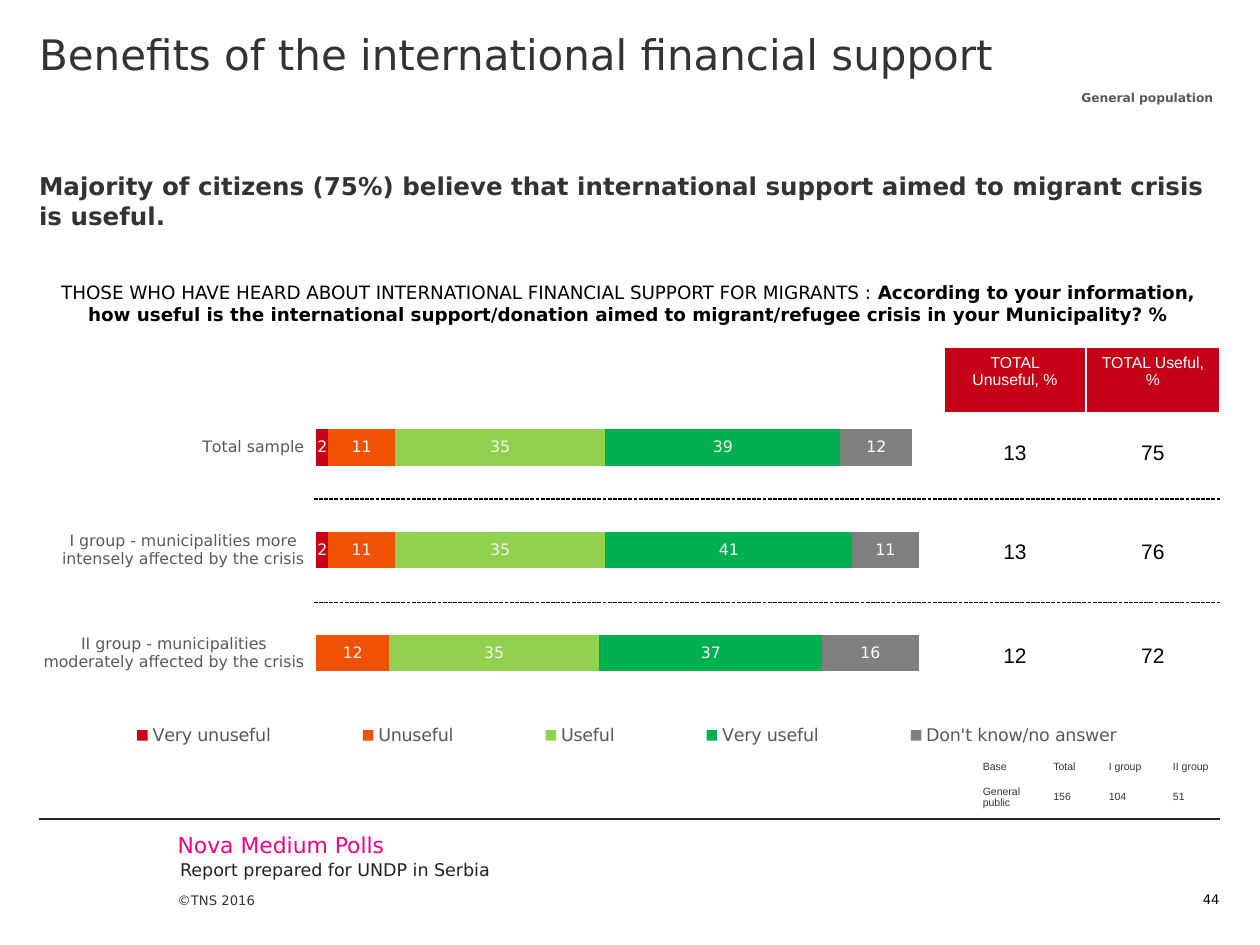
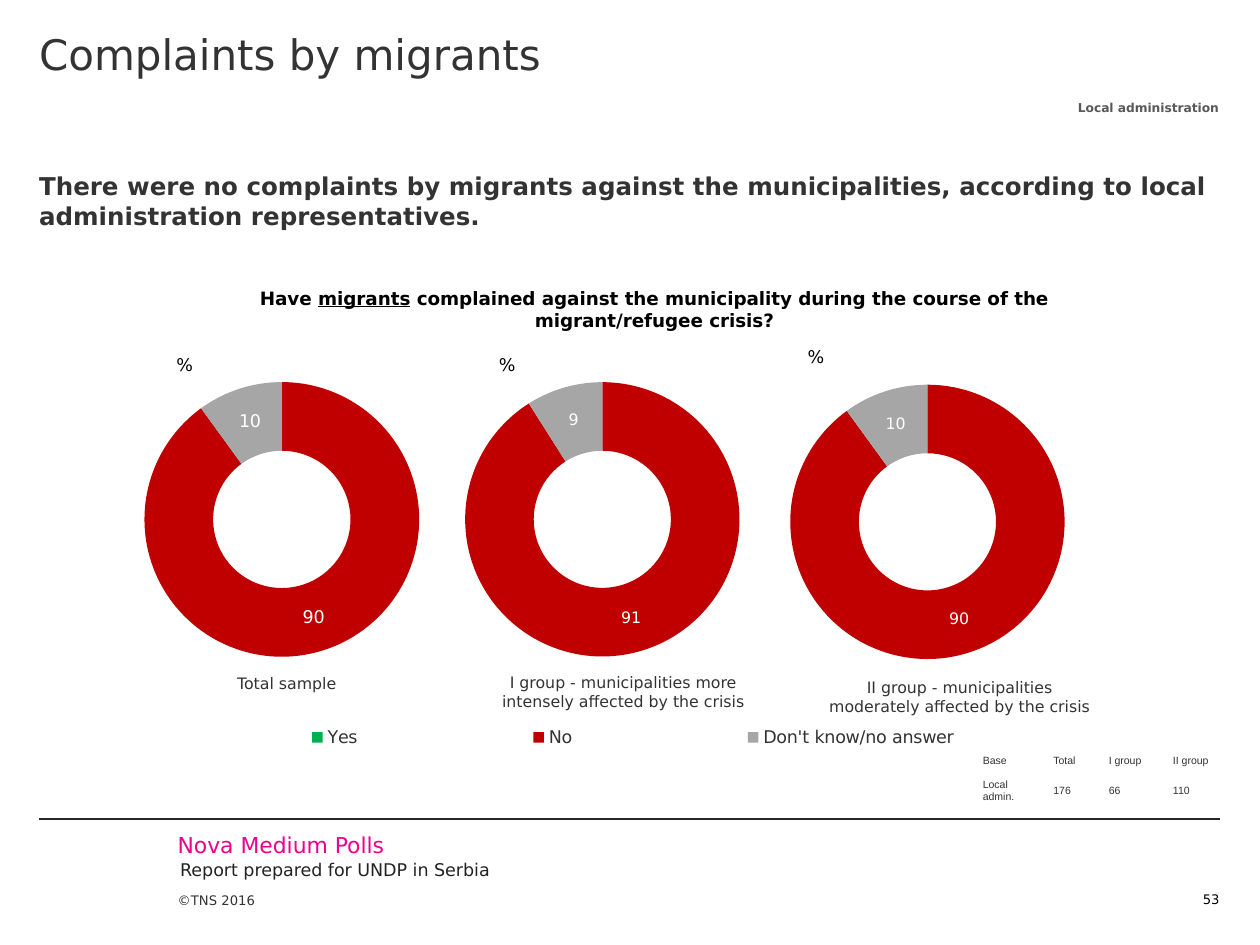
import pptx
import pptx.chart.data
import pptx.dml.color
import pptx.enum.chart
import pptx.enum.dml
import pptx.enum.shapes
import pptx.enum.text
import pptx.oxml
import pptx.oxml.ns
import pptx.util
from pptx.util import Inches

FONT = "DejaVu Sans"
TABLE_FONT = "Arial"
BLACK, WHITE, DARK, GRAY = "000000", "FFFFFF", "333333", "595959"
RED, MAGENTA = "C50017", "EC008C"
LEFT, WIDTH = 0.31, 9.37
RIGHT = LEFT + WIDTH

GROUP_NAMES = [
    "Total sample",
    "I group - municipalities more intensely affected by the crisis",
    "II group - municipalities moderately affected by the crisis",
]
USEFULNESS = [
    ("Very unuseful", (2, 2, 0), RED, "F2F2F2"),
    ("Unuseful", (11, 11, 12), "EF5205", "F2F2F2"),
    ("Useful", (35, 35, 35), "92D050", "F2F2F2"),
    ("Very useful", (39, 41, 37), "00B050", "F2F2F2"),
    ("Don't know/no answer", (12, 11, 16), "808080", WHITE),
]
ANSWERS = ["Yes", "No", "Don't know/no answer"]
ANSWER_COLORS = ["00B050", "C00000", "A6A6A6"]
ALIGN = pptx.enum.text.PP_ALIGN
ANCHOR = pptx.enum.text.MSO_ANCHOR


def rgb(color):
    return pptx.dml.color.RGBColor.from_string(color)


def style_font(font, size, color, bold=False, name=FONT):
    font.name, font.size, font.bold = name, pptx.util.Pt(size), bold
    font.color.rgb = rgb(color)


def fill_frame(frame, runs, size, color, bold=False, align=ALIGN.LEFT,
               anchor=ANCHOR.TOP, insets=(0, 0, 0, 0), wrap=True):
    """Write one paragraph; runs is a string or a list of (text, bold, underline)."""
    frame.auto_size = pptx.enum.text.MSO_AUTO_SIZE.NONE
    frame.word_wrap, frame.vertical_anchor = wrap, anchor
    (frame.margin_left, frame.margin_top,
     frame.margin_right, frame.margin_bottom) = map(Inches, insets)
    paragraph = frame.paragraphs[0]
    paragraph.alignment = align
    paragraph.space_before = pptx.util.Pt(0)
    if isinstance(runs, str):
        runs = [(runs, bold, False)]
    for text, is_bold, underline in runs:
        run = paragraph.add_run()
        run.text = text
        style_font(run.font, size, color, is_bold)
        if underline:
            run.font.underline = True
    return paragraph


def add_text(slide, box, runs, size, color, **options):
    shape = slide.shapes.add_textbox(*map(Inches, box))
    fill_frame(shape.text_frame, runs, size, color, **options)
    return shape


def add_line(slide, left, right, y, color, dash=None):
    line = slide.shapes.add_connector(
        pptx.enum.shapes.MSO_CONNECTOR.STRAIGHT,
        Inches(left), Inches(y), Inches(right), Inches(y))
    line.line.color.rgb = rgb(color)
    line.line.width = pptx.util.Pt(0.75)
    if dash:
        line.line.dash_style = dash
    properties = line.element.find(pptx.oxml.ns.qn("p:spPr"))
    properties.append(pptx.oxml.parse_xml(
        f'<a:effectLst {pptx.oxml.ns.nsdecls("a")}/>'))
    return line


def add_footer_to_layout(layout, slide):
    """Build the footer on a slide, then move it to the layout all slides share."""
    footer = [
        add_text(slide, (1.41, 6.92, 0.83, 0.58), "©TNS 2016", 7.5, DARK,
                 anchor=ANCHOR.BOTTOM, insets=(0, 0, 0, 0.29)),
        add_line(slide, LEFT, RIGHT, 6.5, "262626"),
        add_text(slide, (1.41, 6.6, 3.31, 0.21), "Nova Medium Polls", 12.5, MAGENTA),
        add_text(slide, (1.43, 6.82, 6.81, 0.18),
                 "Report prepared for UNDP in Serbia", 10, "232323"),
    ]
    for shape in footer:
        layout.shapes.element.append(shape.element)


def add_heading(slide, title, message, page):
    for placeholder, text, top, height, size, bold in (
            (slide.shapes.title, title, 0, 1.13, 24, False),
            (slide.placeholders[1], message, 1.13, 0.83, 14, True)):
        placeholder.left, placeholder.top = Inches(LEFT), Inches(top)
        placeholder.width, placeholder.height = Inches(WIDTH), Inches(height)
        paragraph = fill_frame(placeholder.text_frame, text, size, DARK,
                               bold=bold, insets=(0, 0.23, 0, 0))
        properties = paragraph._p.get_or_add_pPr()
        properties.set("marL", "0")
        properties.set("indent", "0")
        properties.append(pptx.oxml.parse_xml(
            f'<a:buNone {pptx.oxml.ns.nsdecls("a")}/>'))
    add_text(slide, (9.13, 6.92, 0.55, 0.28), page, 7.5, BLACK,
             align=ALIGN.RIGHT, anchor=ANCHOR.BOTTOM)


def add_audience(slide, box, text):
    add_text(slide, box, text, 7, GRAY, bold=True, align=ALIGN.CENTER,
             insets=(0.1, 0.05, 0.1, 0.05), wrap=False)


def add_question(slide, box, runs):
    add_text(slide, box, runs, 10.5, BLACK, align=ALIGN.CENTER,
             insets=(0.1, 0.05, 0.1, 0.05))


def border_cell(cell, bottom_width):
    properties = cell._tc.get_or_add_tcPr()
    widths = {"lnL": 1, "lnR": 1, "lnT": 1, "lnB": bottom_width}
    for index, (side, width) in enumerate(widths.items()):
        properties.insert(index, pptx.oxml.parse_xml(
            f'<a:{side} {pptx.oxml.ns.nsdecls("a")} w="{pptx.util.Pt(width)}">'
            f'<a:solidFill><a:srgbClr val="{WHITE}"/></a:solidFill></a:{side}>'))


def add_table(slide, left, top, widths, heights, rows, style_cell):
    """Add a plain table; style_cell(cell, row_index) returns size and colour."""
    table = slide.shapes.add_table(
        len(rows), len(widths), Inches(left), Inches(top),
        Inches(sum(widths)), Inches(sum(heights))).table
    table.first_row = table.horz_banding = False
    for column, width in zip(table.columns, widths):
        column.width = Inches(width)
    for row, height in zip(table.rows, heights):
        row.height = Inches(height)
    for row_index, values in enumerate(rows):
        for column_index, value in enumerate(values):
            cell = table.cell(row_index, column_index)
            cell.text = value
            cell.fill.background()
            cell.vertical_anchor = ANCHOR.MIDDLE
            size, color = style_cell(cell, row_index)
            style_font(cell.text_frame.paragraphs[0].runs[0].font,
                       size, color, name=TABLE_FONT)
            border_cell(cell, 3 if row_index == 0 else 1)


def style_total_cell(cell, row_index):
    cell.text_frame.paragraphs[0].alignment = ALIGN.CENTER
    if row_index:
        return 12, BLACK
    cell.fill.solid()
    cell.fill.fore_color.rgb = rgb(RED)
    cell.vertical_anchor = ANCHOR.TOP
    return 9, WHITE


def style_base_cell(cell, row_index):
    cell.margin_top = cell.margin_bottom = Inches(0.05)
    return 6, DARK


def add_base_table(slide, top, heights, counts):
    header = ["Base", "Total", "I group", "II group"]
    add_table(slide, 7.7, top, (0.56, 0.44, 0.51, 0.56), heights,
              [header, counts], style_base_cell)


def set_layout(parent, index, box, target=""):
    """Place a plot area or legend at fractions of its chart."""
    for layout in parent.findall(pptx.oxml.ns.qn("c:layout")):
        parent.remove(layout)
    values = "".join(f'<c:{key} val="{value}"/>' for key, value in zip("xywh", box))
    parent.insert(index, pptx.oxml.parse_xml(
        f'<c:layout {pptx.oxml.ns.nsdecls("c")}><c:manualLayout>{target}'
        f'<c:xMode val="edge"/><c:yMode val="edge"/>{values}'
        '</c:manualLayout></c:layout>'))


def add_chart(slide, kind, box, categories, series, plot_box):
    data = pptx.chart.data.CategoryChartData(number_format="0")
    data.categories = categories
    for name, values in series:
        data.add_series(name, values)
    chart = slide.shapes.add_chart(kind, *map(Inches, box), data).chart
    chart.has_title = chart.has_legend = False
    style_font(chart.font, 10, BLACK)
    set_layout(chart.element.xpath("//c:plotArea")[0], 0, plot_box,
               '<c:layoutTarget val="inner"/>')
    return chart


def add_legend(chart, color, box):
    chart.has_legend = True
    chart.legend.position = pptx.enum.chart.XL_LEGEND_POSITION.BOTTOM
    chart.legend.include_in_layout = False
    style_font(chart.legend.font, 10, color)
    set_layout(chart.element.xpath("//c:legend")[0], 1, box)


def label_series(series, size, color):
    labels = series.data_labels
    labels.show_value = True
    labels.number_format, labels.number_format_is_linked = "0;;", False
    style_font(labels.font, size, color)


def add_usefulness_chart(slide, box):
    chart = add_chart(slide, pptx.enum.chart.XL_CHART_TYPE.BAR_STACKED, box,
                      GROUP_NAMES, [row[:2] for row in USEFULNESS],
                      (0.235, 0.103, 0.51, 0.656))
    plot = chart.plots[0]
    plot.gap_width, plot.overlap, plot.vary_by_categories = 182, 100, False
    for series, (_, _, color, label_color) in zip(plot.series, USEFULNESS):
        series.format.fill.solid()
        series.format.fill.fore_color.rgb = rgb(color)
        label_series(series, 9, label_color)
    axis = chart.category_axis
    axis.reverse_order = True
    axis.format.line.fill.background()
    style_font(axis.tick_labels.font, 9, GRAY)
    chart.value_axis.minimum_scale, chart.value_axis.maximum_scale = 0, 100
    chart.value_axis.has_major_gridlines = False
    chart.value_axis.visible = False
    add_legend(chart, GRAY, (0.01, 0.79, 0.976, 0.07))


def add_doughnut(slide, box, values, plot_box, label_size):
    chart = add_chart(slide, pptx.enum.chart.XL_CHART_TYPE.DOUGHNUT, box,
                      ANSWERS, [("Series 1", values)], plot_box)
    chart.plots[0].vary_by_categories = True
    chart.element.xpath("//c:holeSize")[0].set("val", "40")
    series = chart.plots[0].series[0]
    for index, color in enumerate(ANSWER_COLORS):
        fill = series.points[index].format.fill
        fill.solid()
        fill.fore_color.rgb = rgb(color)
    label_series(series, label_size, WHITE)
    return chart


def build_benefits(slide):
    add_heading(slide, "Benefits of the international financial support",
                "Majority of citizens (75%) believe that international support "
                "aimed to migrant crisis is useful.", "44")
    add_audience(slide, (8.48, 0.67, 1.25, 0.22), "General population")
    add_usefulness_chart(slide, (LEFT, 2.76, WIDTH, 3.73))
    add_table(slide, 7.49, 2.76, (1.13, 1.06), (0.53, 0.62, 0.95, 0.7),
              [("TOTAL Unuseful, %", "TOTAL Useful, %"),
               ("13", "75"), ("13", "76"), ("12", "72")], style_total_cell)
    for y in (3.96, 4.78):
        add_line(slide, 2.49, RIGHT, y, BLACK, pptx.enum.dml.MSO_LINE.SQUARE_DOT)
    add_question(slide, (0.29, 2.18, 9.39, 0.63), [
        ("THOSE WHO HAVE HEARD ABOUT INTERNATIONAL FINANCIAL SUPPORT FOR "
         "MIGRANTS : ", False, False),
        ("According to your information, how useful is the international "
         "support/donation aimed to migrant/refugee crisis in your "
         "Municipality? %", True, False)])
    add_base_table(slide, 5.99, (0.18, 0.26), ["General public", "156", "104", "51"])


def build_complaints(slide):
    add_heading(slide, "Complaints by migrants",
                "There were no complaints by migrants against the municipalities, "
                "according to local administration representatives.", "53")
    add_audience(slide, (8.45, 0.75, 1.33, 0.22), "Local administration")
    total = add_doughnut(slide, (LEFT, 2.09, 9.4, 4.4), (0, 90, 10),
                         (0.089, 0.198, 0.232, 0.528), 10)
    add_legend(total, DARK, (0.087, 0.82, 0.829, 0.07))
    for left, top, values in ((3.66, 3.02, (0, 91, 9)), (6.24, 3.04, (0, 90, 10))):
        add_doughnut(slide, (left, top, 2.22, 2.2), values, (0.01, 0.006, 0.99, 0.99), 9)
    for index, (name, top) in enumerate(zip(GROUP_NAMES, (4.83, 4.97, 5.01))):
        add_text(slide, (1.18 + 2.67 * index, top, 2.19, 0.67), name, 9, DARK,
                 align=ALIGN.CENTER, anchor=ANCHOR.BOTTOM)
    for left, top in ((1.4, 2.81), (3.96, 2.81), (6.41, 2.75)):
        add_text(slide, (left, top, 0.36, 0.17), "%", 10, BLACK)
    add_question(slide, (1.68, 2.23, 7.03, 0.45), [
        ("Have ", True, False), ("migrants", True, True),
        (" complained against the municipality during the course of the "
         "migrant/refugee crisis?", True, False)])
    add_base_table(slide, 5.94, (0.19, 0.29), ["Local admin.", "176", "66", "110"])


def main():
    presentation = pptx.Presentation()
    presentation.slide_width, presentation.slide_height = Inches(10), Inches(7.5)
    layout = presentation.slide_layouts[1]
    slides = [presentation.slides.add_slide(layout) for _ in range(2)]
    add_footer_to_layout(layout, slides[0])
    build_benefits(slides[0])
    build_complaints(slides[1])
    presentation.save("out.pptx")


if __name__ == "__main__":
    main()
